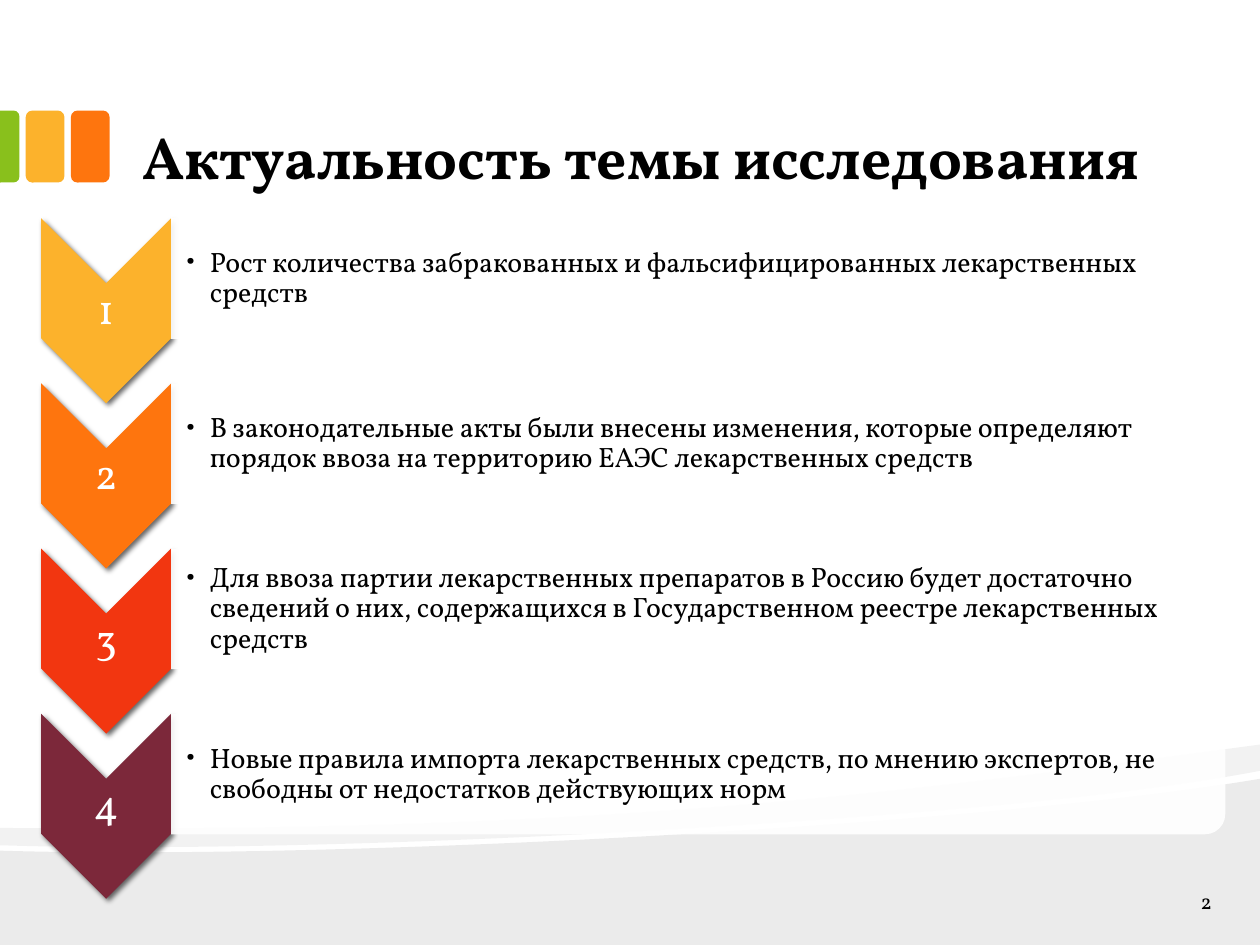
from pptx import Presentation
from pptx.dml.color import RGBColor
from pptx.enum.shapes import MSO_SHAPE as Kind
from pptx.enum.text import MSO_ANCHOR as Anchor, PP_ALIGN as Align
from pptx.oxml.ns import qn
from pptx.util import Cm, Pt
from lxml.etree import SubElement as Sub

FONT = "Vollkorn"
WIDE, HIGH = 25.4, 19.05
STEPS = [
    ("FCB22C", "Рост количества забракованных и фальсифицированных лекарственных средств"),
    ("FE750E", "В законодательные акты были внесены изменения, которые определяют "
               "порядок ввоза на территорию ЕАЭС лекарственных средств"),
    ("F23610", "Для ввоза партии лекарственных препаратов в Россию будет достаточно "
               "сведений о них, содержащихся в Государственном реестре лекарственных средств"),
    ("7C283A", "Новые правила импорта лекарственных средств, по мнению экспертов, "
               "не свободны от недостатков действующих норм"),
]


def rgb(code):
    """Return a colour from its hex string."""
    return RGBColor.from_string(code)


def paint(shape, code, alpha=100):
    """Fill a shape with one colour, without line or shadow."""
    shape.shadow.inherit = False
    shape.line.fill.background()
    shape.fill.solid()
    shape.fill.fore_color.rgb = rgb(code)
    if alpha < 100:
        tone = shape.fill._xPr.find(qn("a:solidFill"))[0]
        Sub(tone, qn("a:alpha"), val=str(alpha * 1000))
    return shape


def block(slide, kind, box, code, alpha=100, turned=False):
    """Add a preset shape that covers the box, turned by a quarter if asked."""
    x, y, w, h = box
    if turned:
        x, y, w, h = x + (w - h) / 2, y + (h - w) / 2, h, w
    shape = slide.shapes.add_shape(kind, Cm(x), Cm(y), Cm(w), Cm(h))
    shape.rotation = 90 if turned else 0
    return paint(shape, code, alpha)


def label(slide, box, text, size, color="000000", align=Align.LEFT,
          anchor=Anchor.MIDDLE, pad=(0.33, 0.18, 0.33, 0.18), bold=False):
    """Add a one-paragraph text box and return the paragraph."""
    frame = slide.shapes.add_textbox(*map(Cm, box)).text_frame
    frame.word_wrap = True
    frame.vertical_anchor = anchor
    frame.margin_left, frame.margin_top, frame.margin_right, frame.margin_bottom = map(Cm, pad)
    frame.text = text
    para = frame.paragraphs[0]
    para.alignment = align
    font = para.runs[0].font
    font.name, font.size, font.bold = FONT, Pt(size), bold
    font.color.rgb = rgb(color)
    return para


def wave(slide, start, parts, alpha):
    """Add a closed translucent outline; a part of three points is a curve."""
    pen = slide.shapes.build_freeform(*map(Cm, start))
    pen.add_line_segments([(Cm(x), Cm(y)) for part in parts for x, y in part], close=True)
    shape = paint(pen.convert_to_shape(), "000000", alpha)
    lines = iter(list(shape._element.iter(qn("a:lnTo"))))
    for part in parts:
        group = [next(lines) for _ in part]
        if len(group) == 3:
            bend = group[0].getparent().makeelement(qn("a:cubicBezTo"), {})
            group[0].addprevious(bend)
            for line in group:
                bend.append(line[0])
                line.getparent().remove(line)


def ground(slide):
    """Draw the hill and the band above it at the foot of the slide."""
    wave(slide, (WIDE, 15.7), [
        [(WIDE, HIGH)], [(0, HIGH)], [(0, 17.15)],
        [(6.71, 17.35), (19.86, 16.64), (WIDE, 15.7)]], 8)
    wave(slide, (WIDE, 15.01), [
        [(WIDE, 15.54)],
        [(23.93, 15.82), (21.89, 16.08), (19.61, 16.28)],
        [(13.28, 16.84), (4.9, 17.2), (0, 17.04)],
        [(0, 16.69)],
        [(12.42, 16.81), (18.49, 15.93), (WIDE, 15.01)]], 5)


def tiles(slide, x, y, w, h):
    """Draw the three tiles, the first cut by the slide edge."""
    edge = block(slide, Kind.ROUND_2_SAME_RECTANGLE, (x, y, w / 2, h), "89C01C", turned=True)
    edge.adjustments[0] = 0.29
    for i, code in enumerate(("FCB22C", "FE750E")):
        block(slide, Kind.ROUNDED_RECTANGLE, (x + 0.52 + 0.91 * i, y, w, h), code)


def shade(shape):
    """Give a shape a soft shadow to the lower right."""
    effects = shape._element.spPr.find(qn("a:effectLst"))
    drop = Sub(effects, qn("a:outerShdw"), blurRad=str(Pt(3)), dist=str(Pt(2)),
               dir="2700000", algn="ctr", rotWithShape="0")
    tone = Sub(drop, qn("a:srgbClr"), val="000000")
    Sub(tone, qn("a:alpha"), val="60000")


def bullet(para):
    """Give a paragraph a hanging bullet."""
    props = para._p.get_or_add_pPr()
    props.set("marL", str(Cm(0.48)))
    props.set("indent", str(-Cm(0.48)))
    Sub(props, qn("a:buFont"), typeface=FONT)
    Sub(props, qn("a:buChar"), char="•")


def step(slide, x, y, w, number, code, text):
    """Draw one numbered chevron with its text panel."""
    arm, tall = 2.62, 3.73
    shade(block(slide, Kind.CHEVRON, (x, y, arm, tall), code, turned=True))
    mark = label(slide, (x, y + arm / 2, arm, tall - arm), str(number), 24, "FFFFFF",
                 Align.CENTER, pad=(0.04,) * 4)
    mark.line_spacing = 0.9
    left, wide = x + arm, w - arm
    block(slide, Kind.ROUND_2_SAME_RECTANGLE, (left, y, wide, 2.43), "FFFFFF", 90, True)
    para = label(slide, (left, y + 0.12, wide - 0.12, 2.19), text, 16,
                 pad=(0.3, 0.03, 0.03, 0.03))
    para.line_spacing = 0.9
    bullet(para)


def steps(slide, x, y, w, pitch):
    """Stack the steps at an equal pitch."""
    for i, (code, text) in enumerate(STEPS):
        step(slide, x, y + i * pitch, w, i + 1, code, text)


def main():
    """Build and save the slide."""
    deck = Presentation()
    deck.slide_width, deck.slide_height = Cm(WIDE), Cm(HIGH)
    slide = deck.slides.add_slide(deck.slide_layouts[6])
    ground(slide)
    tiles(slide, 0, 2.23, 0.78, 1.45)
    label(slide, (2.55, 0.43, 21.97, 3.61), "Актуальность темы исследования", 34,
          anchor=Anchor.BOTTOM, bold=True)
    steps(slide, 0.83, 4.4, 23.87, 3.33)
    label(slide, (23.06, 17.91, 1.7, 0.51), "2", 12, align=Align.RIGHT)
    deck.save("out.pptx")


if __name__ == "__main__":
    main()
